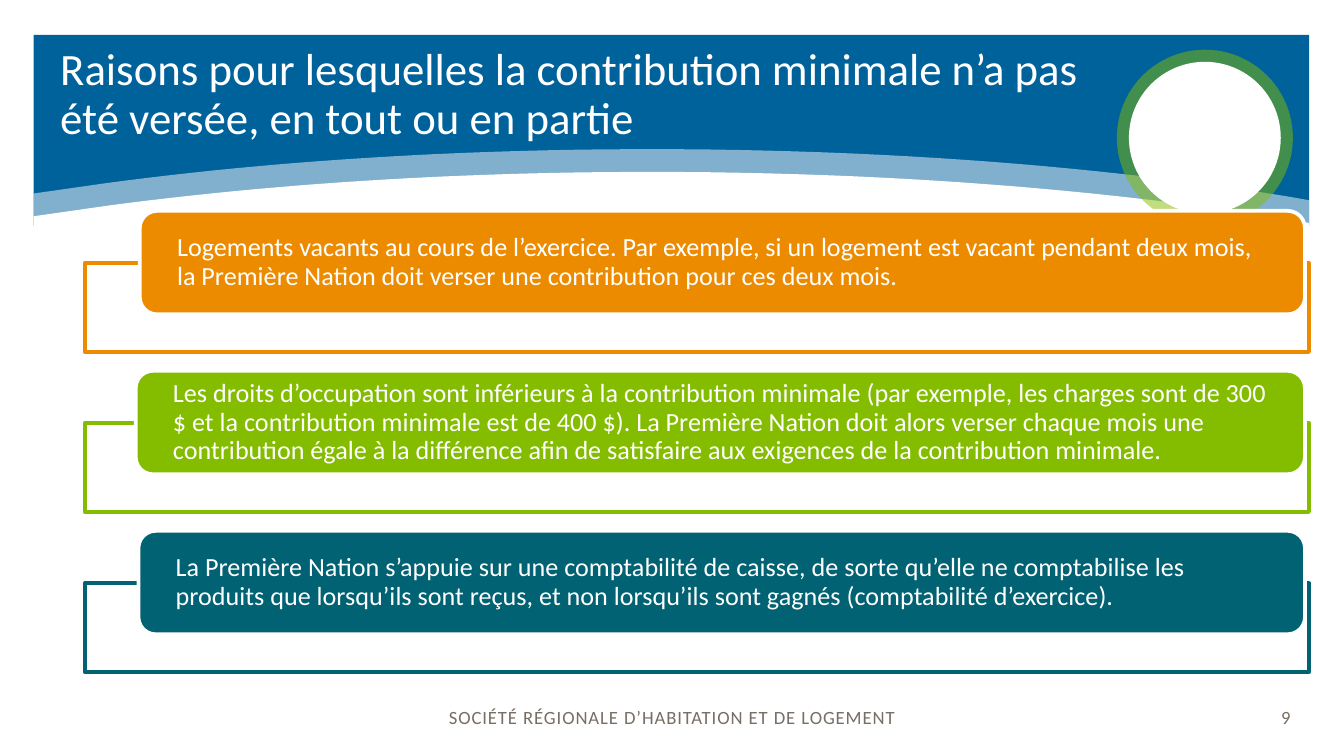
import pptx
import pptx.dml.color
import pptx.enum.shapes
import pptx.enum.text
import pptx.oxml
import pptx.oxml.ns
import pptx.util

COLORS = {
    "blue": "00629B", "white": "FFFFFF", "green": "84BD00",
    "orange": "ED8B00", "teal": "006272", "taupe": "776E64",
}
KIND = pptx.enum.shapes.MSO_SHAPE
ALIGN = pptx.enum.text.PP_ALIGN

deck = pptx.Presentation()
deck.slide_width = pptx.util.Inches(10)
deck.slide_height = pptx.util.Inches(5.625)
page = deck.slides.add_slide(deck.slide_layouts[6])

# The grid has 100 columns and 100 rows.
COL = deck.slide_width / 100
ROW = deck.slide_height / 100


def paint(shape, fill, opacity=100, line=None):
    shape.shadow.inherit = False
    shape.fill.solid()
    shape.fill.fore_color.rgb = pptx.dml.color.RGBColor.from_string(COLORS[fill])
    if opacity < 100:
        color = shape.fill._xPr.find(".//" + pptx.oxml.ns.qn("a:srgbClr"))
        alpha = pptx.oxml.parse_xml(
            f'<a:alpha {pptx.oxml.ns.nsdecls("a")} val="{opacity * 1000}"/>')
        color.append(alpha)
    if line:
        shape.line.color.rgb = pptx.dml.color.RGBColor.from_string(COLORS[line])
        shape.line.width = pptx.util.Pt(2)
    else:
        shape.line.fill.background()


def write(box, text, size, color, align=ALIGN.LEFT, side=0.1, spacing=None, tracking=0):
    """Fill a box with one middle-anchored paragraph; side is its inset in inches."""
    frame = box.text_frame
    frame.text = text
    frame.word_wrap = True
    frame.vertical_anchor = pptx.enum.text.MSO_ANCHOR.MIDDLE
    frame.margin_left = frame.margin_right = pptx.util.Inches(side)
    frame.margin_top = frame.margin_bottom = 0
    para = frame.paragraphs[0]
    para.alignment = align
    para.line_spacing = spacing
    span = para.runs[0]
    span.font.name = "Calibri"
    span.font.size = pptx.util.Pt(size)
    span.font.color.rgb = pptx.dml.color.RGBColor.from_string(COLORS[color])
    if tracking:
        span.font._element.set("spc", str(tracking))


# Header band, cut from below by a translucent and then a solid wave
band = page.shapes.add_shape(
    KIND.RECTANGLE, int(2.5 * COL), int(4.62 * ROW), int(94.9 * COL), int(25.24 * ROW))
paint(band, "blue")

LEFT, RIGHT, BOTTOM, STEPS = 2.5, 97.4, 31.82, 24
CURVES = [
    [(8.1, 24.18), (20.1, 21.33), (33.8, 19.73), (48.4, 19.73)],
    [(48.4, 19.73), (65.9, 19.73), (82.2, 22.04), (95.7, 25.96)],
]
crest = [(LEFT, 25.6)]
for curve in CURVES:
    for step in range(STEPS + 1):
        t = step / STEPS
        weights = [(1 - t) ** 3, 3 * t * (1 - t) ** 2, 3 * t ** 2 * (1 - t), t ** 3]
        crest.append(tuple(sum(w * point[axis] for w, point in zip(weights, curve))
                           for axis in (0, 1)))
crest.append((RIGHT, 26.49))

for drop, opacity in [(0, 50), (3.02, 100)]:
    outline = [(x, y + drop) for x, y in crest] + [(RIGHT, BOTTOM), (LEFT, BOTTOM)]
    points = [(int(x * COL), int(y * ROW)) for x, y in outline]
    builder = page.shapes.build_freeform(*points[0])
    builder.add_line_segments(points[1:], close=True)
    paint(builder.convert_to_shape(), "white", opacity)

footer = page.shapes.add_shape(
    KIND.RECTANGLE, 0, int(89.78 * ROW), deck.slide_width, int(10.22 * ROW))
paint(footer, "white")
write(footer, "SOCIÉTÉ RÉGIONALE D’HABITATION ET DE LOGEMENT", 10, "taupe",
      ALIGN.CENTER, side=0, tracking=50)

# Ring at the right of the header
for inset, color, opacity in [(0, "green", 50), (0.9, "white", 100)]:
    size = int((13.1 - 2 * inset) * COL)
    disc = page.shapes.add_shape(
        KIND.OVAL, int((83.1 + inset) * COL), int(6.58 * ROW + inset * COL), size, size)
    paint(disc, color, opacity)

# Three reasons: an outlined frame with a rounded label over its top edge
REASONS = [
    ("orange", 10.4, "Logements vacants au cours de l’exercice. Par exemple, si un logement "
     "est vacant pendant deux mois, la Première Nation doit verser une contribution pour "
     "ces deux mois."),
    ("green", 10.1, "Les droits d’occupation sont inférieurs à la contribution minimale (par "
     "exemple, les charges sont de 300 $ et la contribution minimale est de 400 $). La "
     "Première Nation doit alors verser chaque mois une contribution égale à la différence "
     "afin de satisfaire aux exigences de la contribution minimale."),
    ("teal", 10.3, "La Première Nation s’appuie sur une comptabilité de caisse, de sorte "
     "qu’elle ne comptabilise les produits que lorsqu’ils sont reçus, et non lorsqu’ils "
     "sont gagnés (comptabilité d’exercice)."),
]
for index, (color, left, reason) in enumerate(REASONS):
    offset = 21.16 * index
    frame = page.shapes.add_shape(
        KIND.RECTANGLE, int(6.3 * COL), int((34.84 + offset) * ROW),
        int(91.1 * COL), int(11.73 * ROW))
    paint(frame, "white", 90, line=color)
    label = page.shapes.add_shape(
        KIND.ROUNDED_RECTANGLE, int(left * COL), int((27.9 + offset) * ROW),
        int((97.1 - left) * COL), int(13.69 * ROW))
    paint(label, color, line="white")
    write(label, reason, 14, "white", side=0.24, spacing=0.9)

title = page.shapes.add_textbox(
    int(3.5 * COL), int(4.62 * ROW), int(78.6 * COL), int(15.82 * ROW))
write(title, "Raisons pour lesquelles la contribution minimale n’a pas été versée, "
      "en tout ou en partie", 24, "white", spacing=pptx.util.Pt(26))

number = page.shapes.add_textbox(
    int(91.4 * COL), int(89.78 * ROW), int(5.6 * COL), int(10.22 * ROW))
write(number, "9", 10, "taupe", ALIGN.RIGHT, tracking=50)

deck.save("out.pptx")
